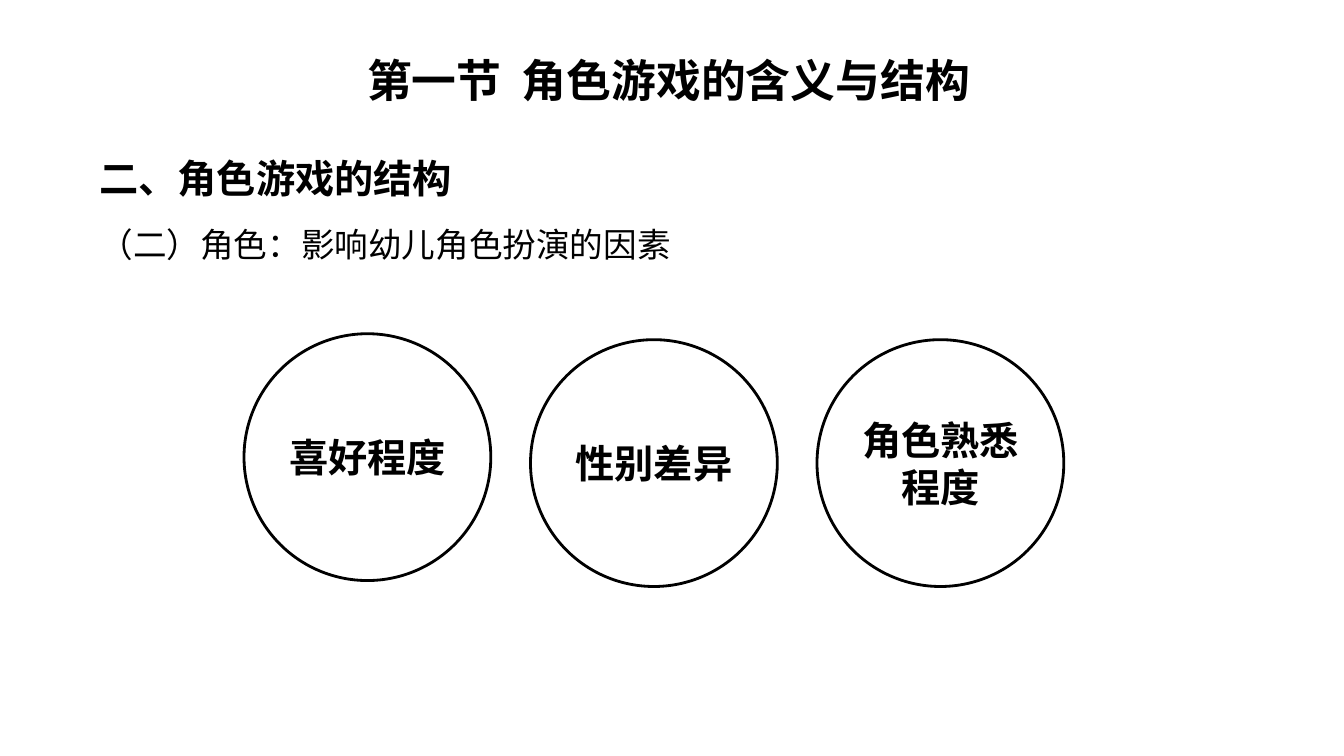
from pptx import Presentation
from pptx.dml.color import RGBColor
from pptx.enum.shapes import MSO_SHAPE as Shape
from pptx.enum.text import MSO_ANCHOR as Anchor, PP_ALIGN as Align
from pptx.oxml.ns import qn
from pptx.util import Cm, Pt

BLACK = RGBColor(0, 0, 0)
SANS = "Noto Sans CJK SC"


def write(para, text, size=28, bold=True, face=SANS, align=Align.LEFT, line=None):
    para.alignment = align
    para.line_spacing = line
    run = para.add_run()
    run.text = text
    font = run.font
    font.size = Pt(size)
    font.bold = bold
    font.name = face
    font.color.rgb = BLACK
    east = run._r.get_or_add_rPr().makeelement(qn("a:ea"), {"typeface": SANS})
    font._element.find(qn("a:latin")).addnext(east)


deck = Presentation()
deck.slide_width = Cm(33.87)
deck.slide_height = Cm(19.05)
slide = deck.slides.add_slide(deck.slide_layouts[5])

title = slide.shapes.title
title.left, title.top, title.width, title.height = Cm(3.61), Cm(1.04), Cm(26.49), Cm(1.93)
title.text_frame.vertical_anchor = Anchor.MIDDLE
write(title.text_frame.paragraphs[0], "第一节  角色游戏的含义与结构", size=32, align=Align.CENTER)

body = slide.shapes.add_textbox(Cm(2.26), Cm(3.38), Cm(29.21), Cm(3.3)).text_frame
body.word_wrap = True
write(body.paragraphs[0], "二、角色游戏的结构", face="Arial", line=Pt(44.6))
write(body.add_paragraph(), "（二）角色：影响幼儿角色扮演的因素", size=24, bold=False, line=Pt(44.6))

SIZE = Cm(6.22)
LEFT, STEP = Cm(6.15), Cm(7.22)
factors = [("喜好程度", Cm(8.41)), ("性别差异", Cm(8.56)), ("角色熟悉程度", Cm(8.56))]
for i, (name, top) in enumerate(factors):
    ring = slide.shapes.add_shape(Shape.OVAL, LEFT + i * STEP, top, SIZE, SIZE)
    ring.shadow.inherit = False
    ring.fill.background()
    ring.line.color.rgb = BLACK
    ring.line.width = Pt(2)
    frame = ring.text_frame
    frame.word_wrap = True
    frame.vertical_anchor = Anchor.MIDDLE
    frame.margin_left = frame.margin_right = 0
    write(frame.paragraphs[0], name, align=Align.CENTER)

deck.save("out.pptx")
